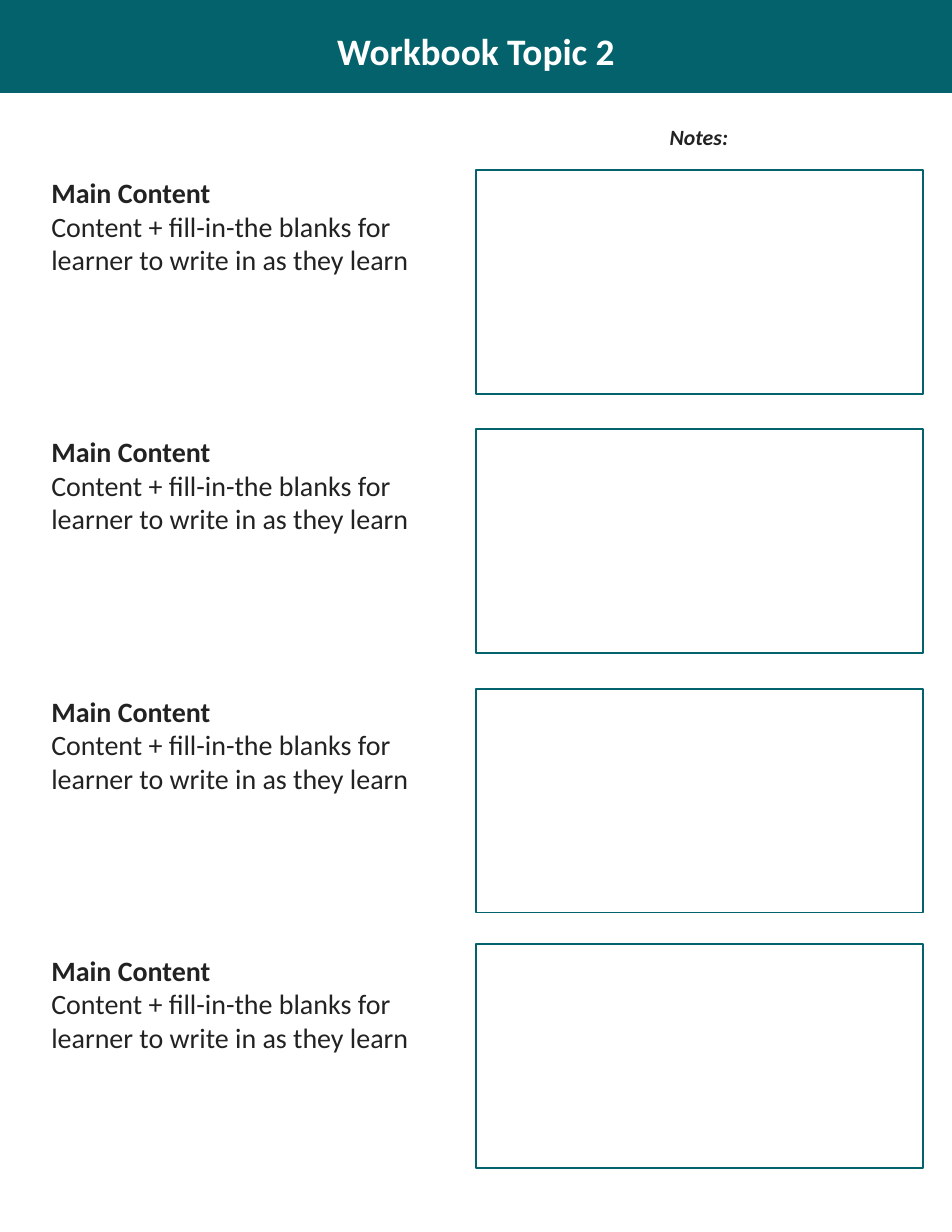
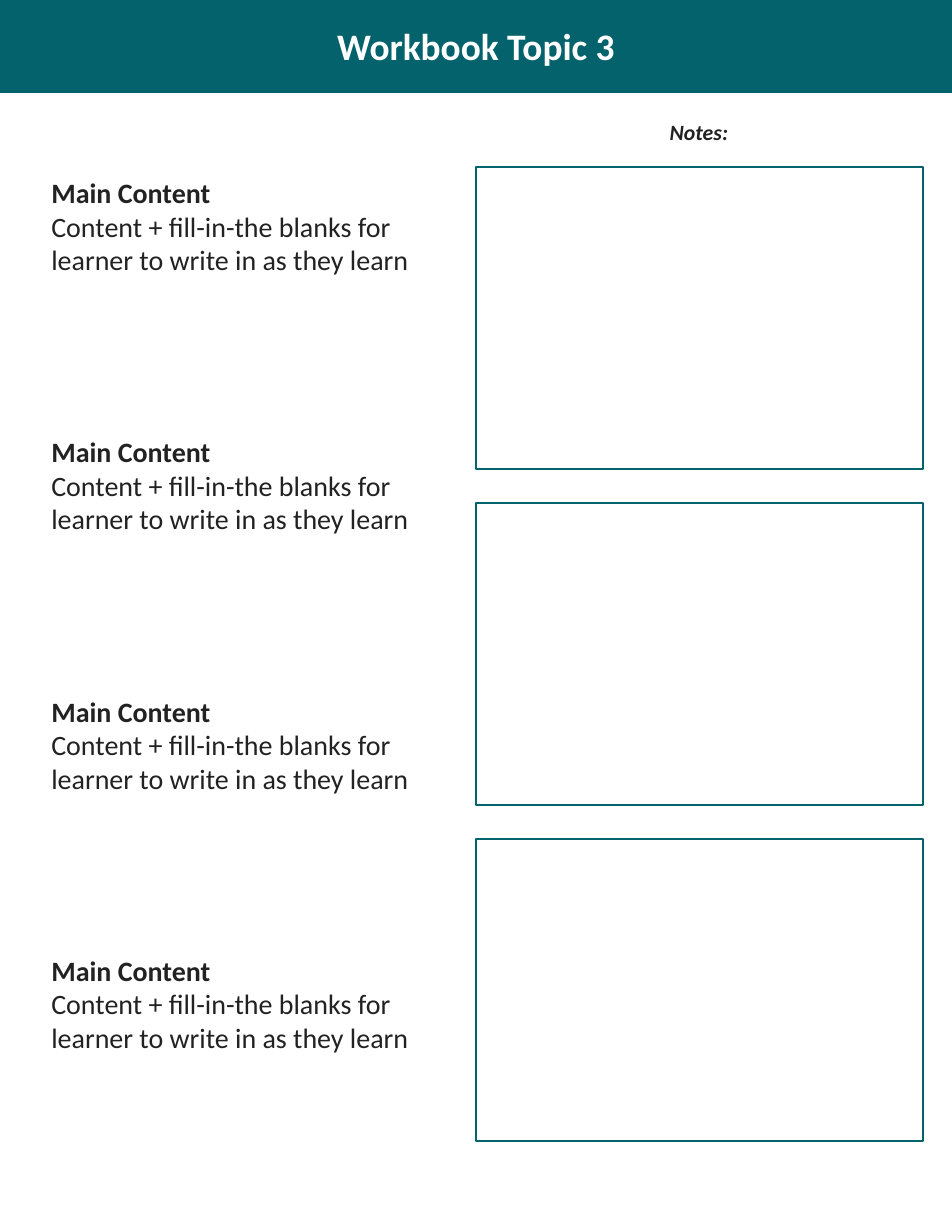
from pptx import Presentation
from pptx.dml.color import RGBColor
from pptx.enum.shapes import MSO_SHAPE
from pptx.enum.text import MSO_ANCHOR, MSO_AUTO_SIZE, PP_ALIGN
from pptx.util import Inches, Pt

TEAL = RGBColor(0x03, 0x62, 0x6B)
INK = RGBColor(0x22, 0x22, 0x22)
WHITE = RGBColor(0xFF, 0xFF, 0xFF)
FONT = "Calibri"
CONTENT_TOPS = [1.52, 3.83, 6.15, 8.46]

TOPICS = [
    {"title": "Workbook Topic 2", "title_top": 0.2, "notes_top": 1.06,
     "box_tops": [1.52, 3.83, 6.15, 8.43], "box_height": 2},
    {"title": "Workbook Topic 3", "title_top": 0.16, "notes_top": 1.01,
     "box_tops": [1.49 + 3 * i for i in range(3)], "box_height": 2.7},
]


def write(p, text, size=18, color=INK, bold=False, italic=False, align=PP_ALIGN.LEFT):
    p.alignment = align
    r = p.add_run()
    r.text = text
    r.font.name = FONT
    r.font.size = Pt(size)
    r.font.color.rgb = color
    r.font.bold = bold
    r.font.italic = italic


def add_rect(s, left, top, width, height, fill):
    sp = s.shapes.add_shape(MSO_SHAPE.RECTANGLE, Inches(left), Inches(top),
                            Inches(width), Inches(height))
    sp.shadow.inherit = False
    sp.fill.solid()
    sp.fill.fore_color.rgb = fill
    sp.line.color.rgb = TEAL
    sp.line.width = Pt(1)
    return sp


prs = Presentation()
prs.slide_width, prs.slide_height = Inches(8.5), Inches(11)

for topic in TOPICS:
    s = prs.slides.add_slide(prs.slide_layouts[5])

    band = add_rect(s, 0, 0, 8.5, 0.82, TEAL)
    s.shapes._spTree.insert(2, band._element)

    title = s.shapes.title
    title.left, title.top = Inches(1.01), Inches(topic["title_top"])
    title.width, title.height = Inches(6.48), Inches(0.5)
    tf = title.text_frame
    tf.auto_size = MSO_AUTO_SIZE.NONE
    tf.vertical_anchor = MSO_ANCHOR.TOP
    write(tf.paragraphs[0], topic["title"], size=24, color=WHITE, bold=True,
          align=PP_ALIGN.CENTER)

    for top in topic["box_tops"]:
        add_rect(s, 4.25, top, 3.99, topic["box_height"], WHITE)

    notes = s.shapes.add_textbox(Inches(5.88), Inches(topic["notes_top"]),
                                 Inches(0.73), Inches(0.34))
    tf = notes.text_frame
    tf.word_wrap = False
    tf.auto_size = MSO_AUTO_SIZE.SHAPE_TO_FIT_TEXT
    write(tf.paragraphs[0], "Notes:", size=14, bold=True, italic=True)

    for top in CONTENT_TOPS:
        content = s.shapes.add_textbox(Inches(0.36), Inches(top), Inches(3.72), Inches(1.01))
        tf = content.text_frame
        tf.word_wrap = True
        tf.auto_size = MSO_AUTO_SIZE.SHAPE_TO_FIT_TEXT
        write(tf.paragraphs[0], "Main Content", bold=True)
        write(tf.add_paragraph(),
              "Content + fill-in-the blanks for learner to write in as they learn")

prs.save("out.pptx")
